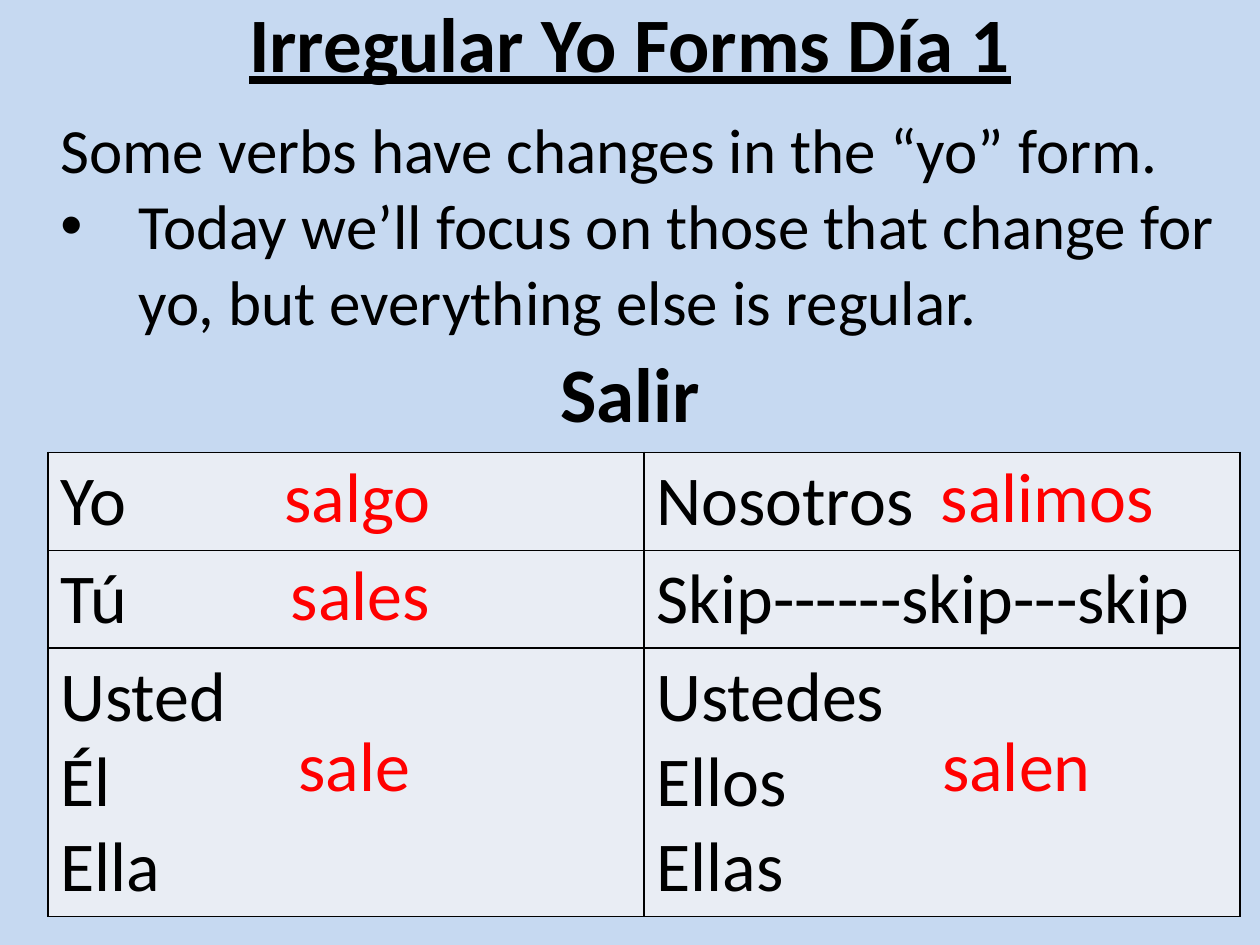
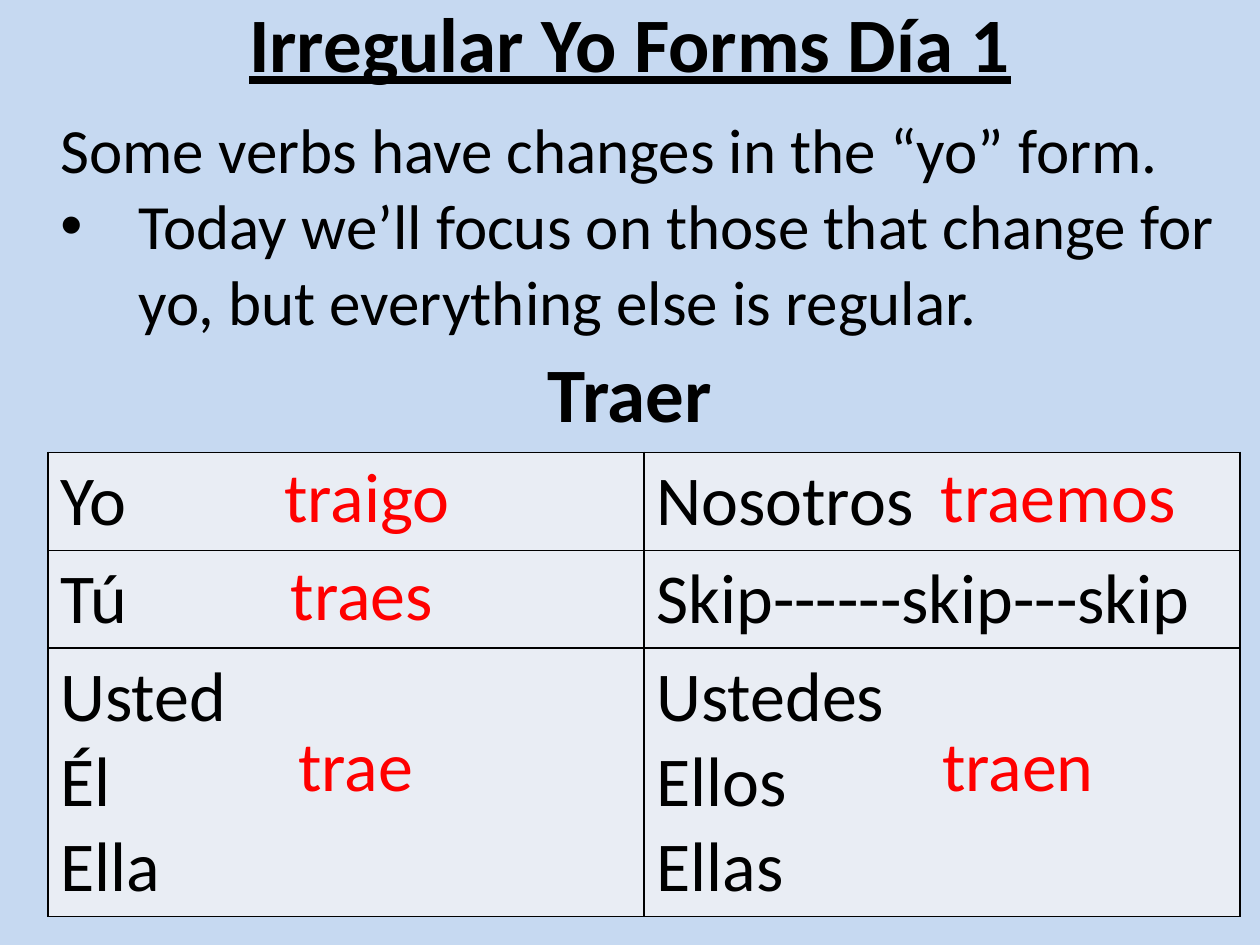
"""Build the conjugation slides for verbs with an irregular yo form."""
from pptx import Presentation
from pptx.dml.color import RGBColor
from pptx.enum.text import MSO_ANCHOR as Anchor, MSO_AUTO_SIZE as AutoSize, PP_ALIGN as Align
from pptx.oxml import parse_xml
from pptx.oxml.ns import nsdecls
from pptx.util import Inches, Pt

SKY = RGBColor(0xC6, 0xD9, 0xF1)
CELL = RGBColor(0xE9, 0xED, 0xF4)
BLACK = RGBColor(0x00, 0x00, 0x00)
RED = RGBColor(0xFF, 0x00, 0x00)

COLUMNS, ROWS = 100, 75
LEFT, TABLE_WIDTH = 3.8, 94.6
HEADING_HEIGHT = 9.2
ANSWER_SIZE = (26.3, 7.7)
ROW_HEIGHTS = (7.7, 7.7, 20.9)

TITLE = "Irregular Yo Forms Día 1"
INTRO = "Some verbs have changes in the “yo” form."
FOCUS = "Today we’ll focus on those that change for yo, but everything else is regular."
PRONOUNS = (
    (("Yo",), ("Nosotros",)),
    (("Tú",), ("Skip------skip---skip",)),
    (("Usted", "Él", "Ella"), ("Ustedes", "Ellos", "Ellas")),
)
ANSWER_PLACES = ((21.6, 35.4), (22.1, 43.2), (22.7, 56.8), (73.7, 35.4), (73.8, 56.8))
VERBS = {
    "Salir": ("salgo", "sales", "sale", "salimos", "salen"),
    "Traer": ("traigo", "traes", "trae", "traemos", "traen"),
}


class VerbDeck:
    """Hold the shared style and the slide being filled."""

    font = "Calibri"

    def __init__(self):
        self.deck = Presentation()
        self.deck.slide_width, self.deck.slide_height = Inches(10), Inches(7.5)
        self.slide = None

    def across(self, columns):
        return round(self.deck.slide_width * columns / COLUMNS)

    def down(self, rows):
        return round(self.deck.slide_height * rows / ROWS)

    def box(self, left, top, width, height):
        return self.across(left), self.down(top), self.across(width), self.down(height)

    def new_slide(self):
        self.slide = self.deck.slides.add_slide(self.deck.slide_layouts[1])
        self.slide.background.fill.solid()
        self.slide.background.fill.fore_color.rgb = SKY

    def add_lines(self, frame, lines, size, color=BLACK, align=Align.LEFT, bold=False, underline=False):
        for number, line in enumerate(lines):
            paragraph = frame.add_paragraph() if number else frame.paragraphs[0]
            paragraph.alignment = align
            paragraph.space_before = Pt(0)
            run = paragraph.add_run()
            run.text = line
            font = run.font
            font.name, font.size, font.color.rgb = self.font, Pt(size), color
            font.bold, font.underline = bold, underline

    def move(self, shape, place):
        shape.left, shape.top, shape.width, shape.height = self.box(*place)
        shape.text_frame.auto_size = AutoSize.NONE

    def title(self, words):
        heading = self.slide.shapes.title
        self.move(heading, (0, -1.3, COLUMNS, HEADING_HEIGHT))
        heading.text_frame.vertical_anchor = Anchor.MIDDLE
        self.add_lines(heading.text_frame, [words], 44, align=Align.CENTER, bold=True, underline=True)

    def intro(self, lead, point):
        body = self.slide.placeholders[1]
        self.move(body, (LEFT, 8.3, TABLE_WIDTH, 19.2))
        self.add_lines(body.text_frame, [lead, point], 36)
        lead_props, point_props = (p._p.get_or_add_pPr() for p in body.text_frame.paragraphs)
        indent = self.across(6.2)
        for props, margin in ((lead_props, 0), (point_props, indent)):
            props.set("marL", str(margin))
            props.set("indent", str(-margin))
        lead_props.append(parse_xml(f"<a:buNone {nsdecls('a')}/>"))
        point_props.append(parse_xml(f"<a:buFont {nsdecls('a')} typeface='Arial'/>"))
        point_props.append(parse_xml(f"<a:buChar {nsdecls('a')} char='•'/>"))

    def text(self, words, place, size, **style):
        frame = self.slide.shapes.add_textbox(*self.box(*place)).text_frame
        frame.word_wrap = True
        frame.vertical_anchor = Anchor.MIDDLE if style.get("bold") else Anchor.TOP
        self.add_lines(frame, [words], size, **style)

    def border(self, cell):
        props = cell._tc.get_or_add_tcPr()
        for side in "LRTB":
            props.append(parse_xml(
                f"<a:ln{side} {nsdecls('a')} w='{int(Pt(1))}'><a:solidFill>"
                f"<a:srgbClr val='{BLACK}'/></a:solidFill></a:ln{side}>"))

    def table(self, rows):
        place = self.box(LEFT, 35.9, TABLE_WIDTH, sum(ROW_HEIGHTS))
        conjugation = self.slide.shapes.add_table(len(rows), len(rows[0]), *place).table
        conjugation.first_row = conjugation.horz_banding = False
        for row, height, entries in zip(conjugation.rows, ROW_HEIGHTS, rows):
            row.height = self.down(height)
            for cell, pronouns in zip(row.cells, entries):
                self.border(cell)
                cell.fill.solid()
                cell.fill.fore_color.rgb = CELL
                self.add_lines(cell.text_frame, pronouns, 40)


def main():
    lesson = VerbDeck()
    for verb, forms in VERBS.items():
        lesson.new_slide()
        lesson.title(TITLE)
        lesson.intro(INTRO, FOCUS)
        lesson.table(PRONOUNS)
        lesson.text(verb, (0, 26.5, COLUMNS, HEADING_HEIGHT), 44, align=Align.CENTER, bold=True)
        for form, corner in zip(forms, ANSWER_PLACES):
            lesson.text(form, corner + ANSWER_SIZE, 40, color=RED)
    lesson.deck.save("out.pptx")


if __name__ == "__main__":
    main()
